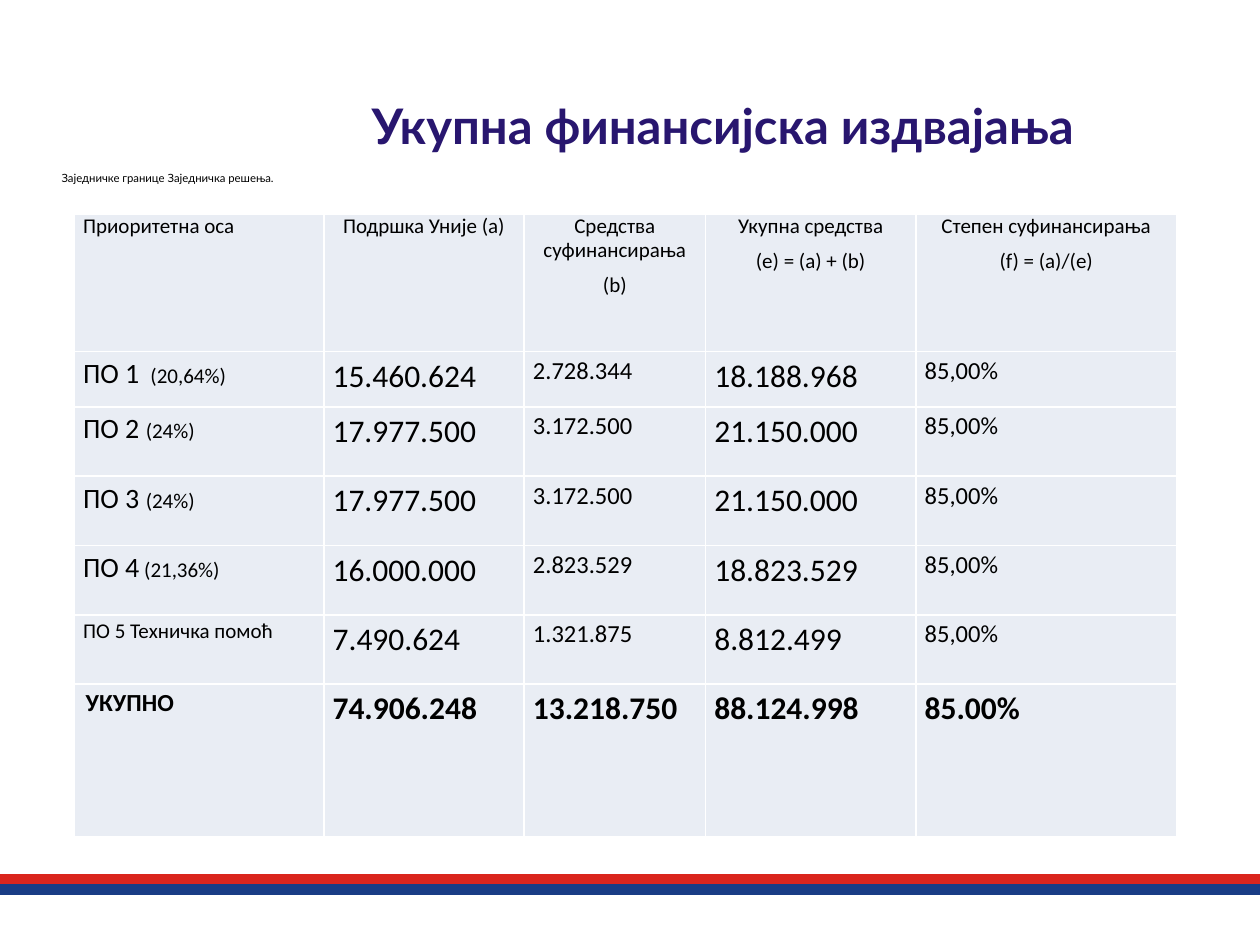
from typing import NamedTuple

from lxml.etree import SubElement
from pptx import Presentation
from pptx.dml.color import RGBColor
from pptx.enum.shapes import MSO_CONNECTOR
from pptx.enum.text import MSO_ANCHOR, MSO_AUTO_SIZE, PP_ALIGN
from pptx.oxml import parse_xml
from pptx.oxml.ns import nsdecls, qn
from pptx.util import Inches, Pt

BLACK = RGBColor(0x00, 0x00, 0x00)
WHITE = RGBColor(0xFF, 0xFF, 0xFF)
INDIGO = RGBColor(0x28, 0x16, 0x6F)
RED = RGBColor(0xDA, 0x25, 0x1D)
BLUE = RGBColor(0x19, 0x3C, 0x85)
CELL_FILL = RGBColor(0xE9, 0xED, 0xF4)

COLUMN_WIDTHS = [1.98, 1.59, 1.44, 1.67, 2.07]
ROW_HEIGHTS = [1.09, 0.44] + [0.55] * 4 + [1.21]
AMOUNT_SIZES = [18, 14, 18, 14]


class Stripe(NamedTuple):
    y: float
    color: RGBColor


class Axis(NamedTuple):
    label: list[tuple[str, int]]  # (text, size) of each run
    amounts: list[str]
    align: PP_ALIGN = PP_ALIGN.JUSTIFY


STRIPES = [Stripe(6.98, RED), Stripe(7.06, BLUE)]

HEADERS = [
    ["Приоритетна оса"],
    ["Подршка Уније (a)"],
    ["Средства суфинансирања", "(b)"],
    ["Укупна средства", "(e) = (a) + (b)"],
    ["Степен суфинансирања", "(f) = (a)/(e)"],
]

AXES = [
    Axis([("ПО 1 ", 16), (" (20,64%)", 12)],
         ["15.460.624", "2.728.344", "18.188.968", "85,00%"]),
    Axis([("ПО 2 ", 16), ("(24%)", 12)],
         ["17.977.500", "3.172.500", "21.150.000", "85,00%"]),
    Axis([("ПО 3 ", 16), ("(24%)", 12)],
         ["17.977.500", "3.172.500", "21.150.000", "85,00%"]),
    Axis([("ПО 4", 16), (" (21,36%)", 12)],
         ["16.000.000", "2.823.529", "18.823.529", "85,00%"]),
    Axis([("ПО 5 Техничка помоћ", 12)],
         ["7.490.624", "1.321.875", "8.812.499", "85,00%"], PP_ALIGN.LEFT),
]

TOTALS = ["74.906.248", "13.218.750", "88.124.998", "85.00%"]


def add_stripe(s, stripe: Stripe) -> None:
    y = Inches(stripe.y)
    line = s.shapes.add_connector(MSO_CONNECTOR.STRAIGHT, 0, y, Inches(10), y)
    line.line.color.rgb = stripe.color
    line.line.width = Pt(6)
    SubElement(line._element.spPr, qn("a:effectLst"))


def style_cell(cell) -> None:
    """Set the fill, margins and white borders of a cell."""
    cell.fill.solid()
    cell.fill.fore_color.rgb = CELL_FILL
    cell.margin_left = cell.margin_right = Inches(0.07)
    cell.margin_top = cell.margin_bottom = 0
    tc_pr = cell._tc.get_or_add_tcPr()
    for i, side in enumerate(["lnL", "lnR", "lnT", "lnB"]):
        tc_pr.insert(i, parse_xml(
            f'<a:{side} {nsdecls("a")} w="{Pt(1)}"><a:solidFill>'
            f'<a:srgbClr val="{WHITE}"/></a:solidFill></a:{side}>'))


def fill_header(cell, lines: list[str], align: PP_ALIGN) -> None:
    tf = cell.text_frame
    for i, text in enumerate(lines):
        p = tf.add_paragraph() if i else tf.paragraphs[0]
        p.text = text
        p.alignment = align
        p.line_spacing = Pt(14)
        p.space_before = Pt(3 if i else 0)
        p.space_after = Pt(3)
        p.font.size = Pt(12)
        p.font.name = "Calibri"
        p.font.color.rgb = BLACK
        p.font.bold = False


def fill_body(cell, runs: list[tuple[str, int]], bold: bool = False,
              align: PP_ALIGN = PP_ALIGN.JUSTIFY):
    p = cell.text_frame.paragraphs[0]
    p.alignment = align
    p.line_spacing = 1.15
    p.font.name = "Calibri"
    p.font.color.rgb = BLACK
    p.font.bold = bold
    for text, size in runs:
        r = p.add_run()
        r.text = text
        r.font.size = Pt(size)
    return p


def add_funding_table(s) -> None:
    table = s.shapes.add_table(
        len(ROW_HEIGHTS), len(COLUMN_WIDTHS), Inches(0.59), Inches(1.7),
        Inches(sum(COLUMN_WIDTHS)), Inches(sum(ROW_HEIGHTS))).table
    table.first_row = table.horz_banding = False
    for column, width in zip(table.columns, COLUMN_WIDTHS):
        column.width = Inches(width)
    for row, height in zip(table.rows, ROW_HEIGHTS):
        row.height = Inches(height)
    for cell in table.iter_cells():
        style_cell(cell)

    # Header row
    for col, lines in enumerate(HEADERS):
        fill_header(table.cell(0, col), lines,
                    PP_ALIGN.CENTER if col else PP_ALIGN.LEFT)

    # Priority axes
    for row, axis in enumerate(AXES, start=1):
        fill_body(table.cell(row, 0), axis.label, align=axis.align)
        for col, (amount, size) in enumerate(zip(axis.amounts, AMOUNT_SIZES), start=1):
            fill_body(table.cell(row, col), [(amount, size)])

    # Totals
    last = len(ROW_HEIGHTS) - 1
    p = fill_body(table.cell(last, 0), [("УКУПНО", 14)], bold=True)
    p.space_after = Pt(3)
    p._p.get_or_add_pPr().set("marL", str(Inches(0.02)))
    for col, total in enumerate(TOTALS, start=1):
        fill_body(table.cell(last, col), [(total, 18)], bold=True)


def add_motto(s) -> None:
    box = s.shapes.add_textbox(Inches(0.39), Inches(1.31), Inches(2.12), Inches(0.21))
    tf = box.text_frame
    tf.word_wrap = True
    tf.auto_size = MSO_AUTO_SIZE.SHAPE_TO_FIT_TEXT
    p = tf.paragraphs[0]
    p.text = "Заједничке границе Заједничка решења."
    p.font.size = Pt(6.5)
    p.font.name = "Lato"
    p.font.color.rgb = BLACK


def set_title(s) -> None:
    title = s.shapes.title
    title.left, title.top = Inches(2.19), Inches(0.45)
    title.width, title.height = Inches(7.09), Inches(1.09)
    tf = title.text_frame
    tf.vertical_anchor = MSO_ANCHOR.MIDDLE
    p = tf.paragraphs[0]
    p.text = "Укупна финансијска издвајања"
    p.alignment = PP_ALIGN.CENTER
    p.font.size = Pt(28)
    p.font.name = "Lato"
    p.font.bold = True
    p.font.color.rgb = INDIGO


def main() -> None:
    prs = Presentation()
    prs.slide_width, prs.slide_height = Inches(10), Inches(7.5)
    s = prs.slides.add_slide(prs.slide_layouts[5])
    for stripe in STRIPES:
        add_stripe(s, stripe)
    add_motto(s)
    set_title(s)
    add_funding_table(s)
    prs.save("out.pptx")


if __name__ == "__main__":
    main()
